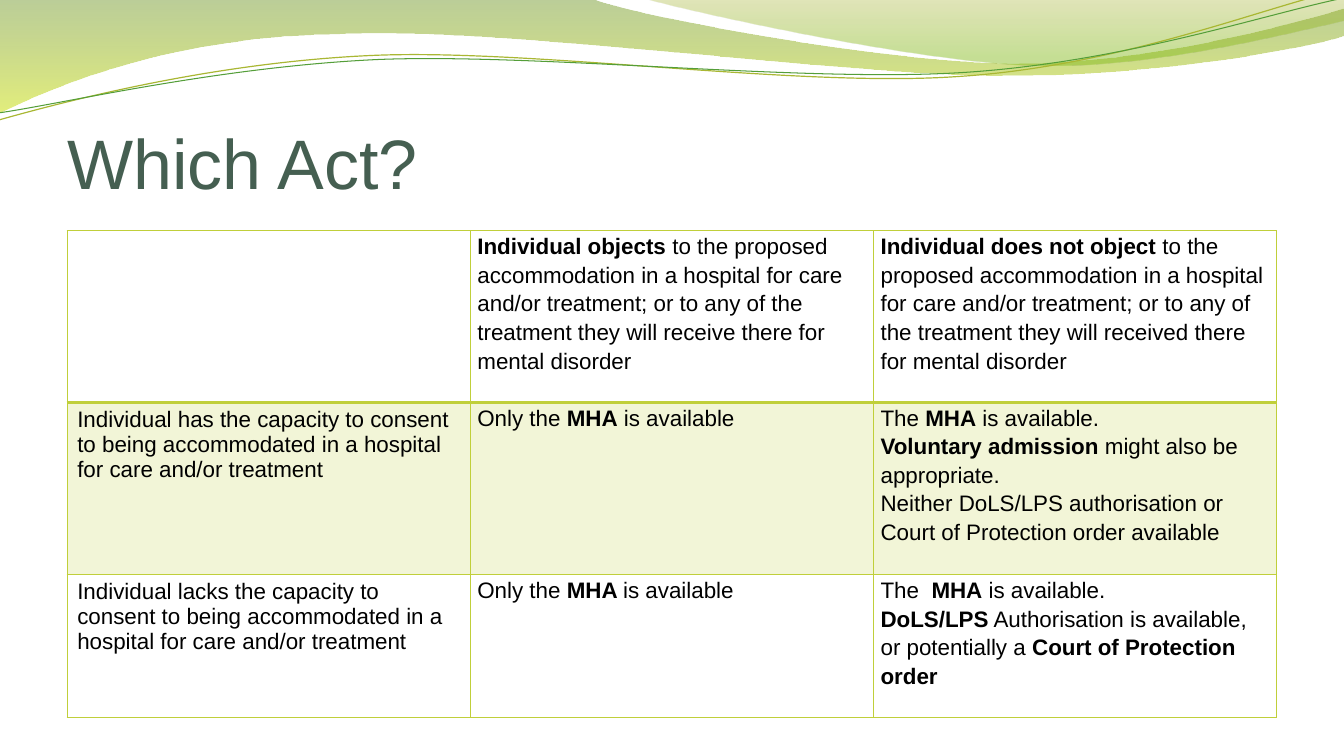
from lxml.etree import SubElement
from pptx import Presentation
from pptx.dml.color import RGBColor
from pptx.enum.text import MSO_ANCHOR, PP_ALIGN
from pptx.oxml.ns import qn
from pptx.util import Inches, Pt

WIDTH, HEIGHT = 13.33, 7.5
MARGIN, CONTENT = WIDTH * 0.05, WIDTH * 0.9
FONT = "Arial"
COLOURS = {
    "title": "455F51", "text": "000000", "table": "C0CF3A",
    "moss": "69921C", "lime": "CCE10F", "olive": "9BAA1A", "leaf": "81BA16",
    "olive line": "A9B733", "green line": "549E39",
}

# Each wave is a list of points in inches: two numbers make a line, six a curve.
LEFT_WAVE = [
    (0, 0), (5.87, -0.01),
    (6.34, 0.17, 8.84, 0.63, 10.11, 0.63),
    (11.37, 0.63, 12.77, 0.26, 13.33, 0.09),
    (13.34, 0.36),
    (13.11, 0.44, 11.59, 0.76, 9.94, 0.75),
    (8.29, 0.75, 5.09, 0.28, 3.43, 0.34),
    (1.72, 0.36, 0.61, 0.83, -0.02, 1.13),
    (0, 0),
]
RIGHT_WAVE = [
    (6.38, -0.01),
    (6.79, 0.11, 9.09, 0.62, 10.25, 0.65),
    (11.4, 0.69, 12.82, 0.32, 13.33, 0.21),
    (13.33, 0), (6.38, -0.01),
]
OLIVE_LINE = [
    (-0.01, 1.19),
    (0.63, 1.01, 2.1, 0.62, 3.69, 0.55),
    (5.27, 0.48, 7.89, 0.87, 9.49, 0.76),
    (11.1, 0.66, 12.51, 0.08, 13.3, -0.1),
]
GREEN_LINE = [
    (-0.01, 1.12),
    (0.62, 1.03, 2.18, 0.66, 3.77, 0.59),
    (5.37, 0.53, 7.96, 0.82, 9.55, 0.72),
    (11.14, 0.62, 12.55, 0.14, 13.33, -0.02),
]

# Asterisks switch bold on and off; each string in a cell is a paragraph.
ROW_HEIGHTS = [1.7, 1.71, 1.42]
CAPACITY = "to consent to being accommodated in a hospital for care and/or treatment"
ROWS = [
    [
        [],
        ["*Individual objects *to the proposed accommodation in a hospital for care "
         "and/or treatment; or to any of the treatment they will receive there for "
         "mental disorder"],
        ["*Individual does not object *to the proposed accommodation in a hospital "
         "for care and/or treatment; or to any of the treatment they will received "
         "there for mental disorder"],
    ],
    [
        ["Individual has the capacity " + CAPACITY],
        ["Only the *MHA* is available"],
        ["The *MHA* is available.",
         "*Voluntary admission* might also be appropriate.",
         "Neither DoLS/LPS authorisation or Court of Protection order available"],
    ],
    [
        ["Individual lacks the capacity " + CAPACITY],
        ["Only the *MHA *is available"],
        ["The  *MHA* is available.",
         "*DoLS/LPS* Authorisation is available, or potentially a "
         "*Court of Protection order*"],
    ],
]


def colour(name):
    return RGBColor.from_string(COLOURS[name])


def set_alpha(element, percents):
    """Give the colours inside an element their opacities, in order."""
    for node, percent in zip(element.iter(qn("a:srgbClr")), percents):
        SubElement(node, qn("a:alpha")).set("val", str(percent * 1000))


def add_outline(slide, segments, close):
    """Draw the points as lines, then join each curve's three into a Bézier."""
    points = [(round(segment[i] * 1000), round(segment[i + 1] * 1000))
              for segment in segments for i in range(0, len(segment), 2)]
    builder = slide.shapes.build_freeform(*points[0], scale=Inches(1) / 1000)
    builder.add_line_segments(points[1:], close=close)
    shape = builder.convert_to_shape()
    shape.shadow.inherit = False
    lines = iter(list(shape.element.iter(qn("a:lnTo"))))
    for segment in segments[1:]:
        line = next(lines)
        if len(segment) == 6:
            line.addprevious(curve := SubElement(line.getparent(), qn("a:cubicBezTo")))
            for node in (line, next(lines), next(lines)):
                curve.append(node[0])
                node.getparent().remove(node)
    return shape


def add_wave(slide, segments, stops):
    shape = add_outline(slide, segments, True)
    shape.line.fill.background()
    shape.fill.gradient()
    shape.fill.gradient_angle = 270
    for stop, (position, name, _) in zip(shape.fill.gradient_stops, stops):
        stop.position = position
        stop.color.rgb = colour(name)
    set_alpha(shape.element, [alpha for _, _, alpha in stops])


def add_wave_line(slide, segments, name, width):
    shape = add_outline(slide, segments, False)
    shape.fill.background()
    shape.line.color.rgb = colour(name)
    shape.line.width = Pt(width)


def format_run(run, size, name, bold=False):
    run.font.name, run.font.size, run.font.bold = FONT, Pt(size), bold
    run.font.color.rgb = colour(name)


def add_title(slide, text):
    title = slide.shapes.title
    title.left, title.top = Inches(MARGIN), Inches(0.77)
    title.width, title.height = Inches(CONTENT), Inches(HEIGHT / 6)
    frame = title.text_frame
    frame.text = text
    frame.vertical_anchor = MSO_ANCHOR.BOTTOM
    frame.margin_left = frame.margin_right = frame.margin_bottom = 0
    frame.paragraphs[0].alignment = PP_ALIGN.LEFT
    format_run(frame.paragraphs[0].runs[0], 50, "title")


def set_border(cell, side, width):
    line = SubElement(cell._tc.get_or_add_tcPr(), qn("a:ln" + side), w=str(Pt(width)))
    fill = SubElement(line, qn("a:solidFill"))
    SubElement(fill, qn("a:srgbClr"), val=COLOURS["table"])


def fill_cell(cell, paragraphs, row, column):
    for side in "LRTB":
        header_rule = (row, side) in ((0, "B"), (1, "T"))
        set_border(cell, side, 2.25 if header_rule else 1)
    if row == 1:
        cell.fill.solid()
        cell.fill.fore_color.rgb = colour("table")
        set_alpha(cell._tc.tcPr.find(qn("a:solidFill")), [20])
    else:
        cell.fill.background()
    if column > 0:
        cell.margin_left = cell.margin_right = Inches(0.07)
        cell.margin_top = cell.margin_bottom = 0
    frame = cell.text_frame
    for index, text in enumerate(paragraphs):
        paragraph = frame.add_paragraph() if index else frame.paragraphs[0]
        paragraph.line_spacing = 1.15 if column else 1.0
        for part, words in enumerate(text.split("*")):
            if words:
                run = paragraph.add_run()
                run.text = words
                format_run(run, 16, "text", part % 2 == 1)


def add_act_table(slide):
    table = slide.shapes.add_table(
        len(ROWS), len(ROWS[0]), Inches(MARGIN), Inches(2.29),
        Inches(CONTENT), Inches(sum(ROW_HEIGHTS))).table
    table.first_row = table.horz_banding = False
    for row, (cells, height) in enumerate(zip(ROWS, ROW_HEIGHTS)):
        table.rows[row].height = Inches(height)
        for column, paragraphs in enumerate(cells):
            fill_cell(table.cell(row, column), paragraphs, row, column)


def main():
    presentation = Presentation()
    presentation.slide_width, presentation.slide_height = Inches(WIDTH), Inches(HEIGHT)
    slide = presentation.slides.add_slide(presentation.slide_layouts[5])
    # Waves across the top
    add_wave(slide, LEFT_WAVE, [(0, "moss", 45), (1, "lime", 55)])
    add_wave(slide, RIGHT_WAVE, [(0, "olive", 30), (0.8, "leaf", 45)])
    add_wave_line(slide, OLIVE_LINE, "olive line", 0.85)
    add_wave_line(slide, GREEN_LINE, "green line", 0.75)
    # Title and table
    add_title(slide, "Which Act?")
    add_act_table(slide)
    presentation.save("out.pptx")


if __name__ == "__main__":
    main()
